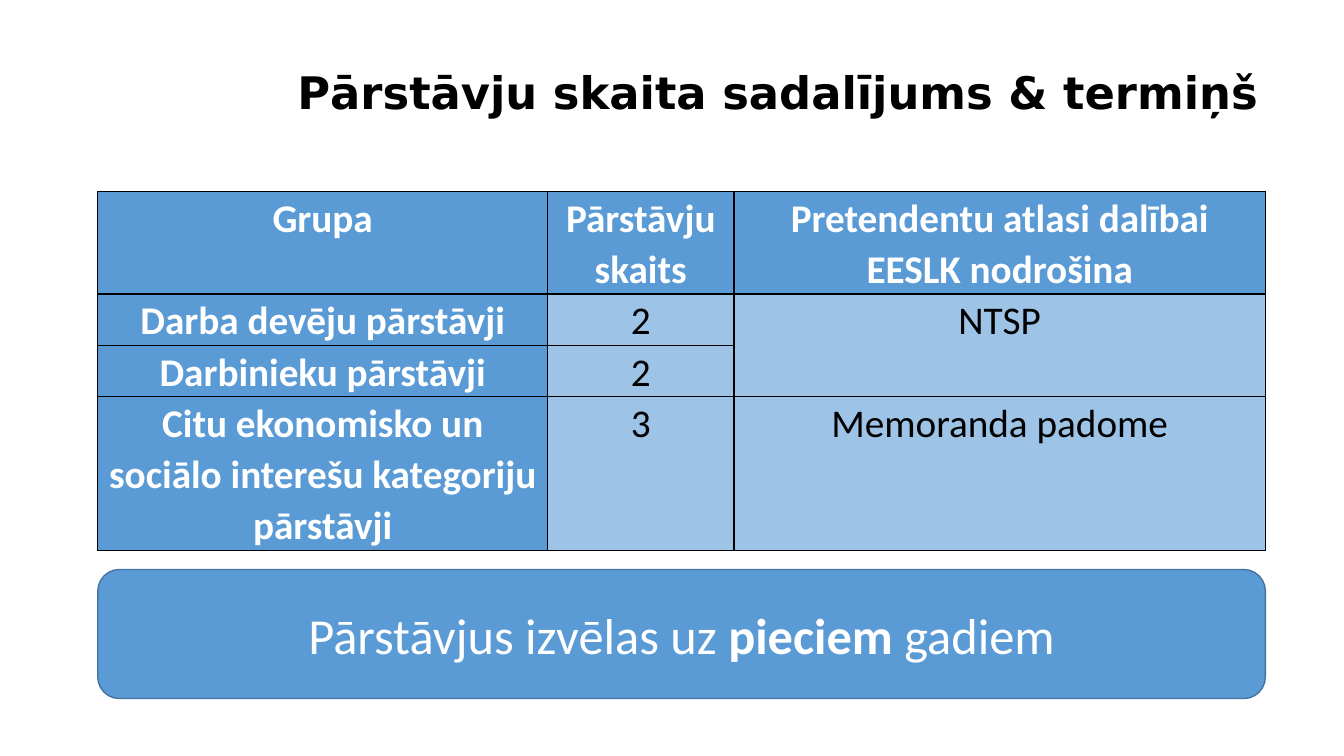
from lxml.etree import SubElement as Sub
from pptx import Presentation
from pptx.dml.color import RGBColor as RGB
from pptx.enum.shapes import MSO_SHAPE as Shape
from pptx.enum.text import MSO_ANCHOR as Anchor, PP_ALIGN as Align
from pptx.oxml.ns import qn
from pptx.util import Pt

PX = 9144  # 100 px to the inch
BLUE, PALE, EDGE = "5B9BD5", "9DC3E6", "43739E"
WHITE, BLACK = "FFFFFF", "000000"


def paint(fill, color):
    fill.solid()
    fill.fore_color.rgb = RGB.from_string(color)


def write(frame, *parts, size, color, font="Calibri", align=Align.CENTER,
          anchor=Anchor.TOP, space=None, after=None):
    """Fill the frame with one paragraph of (text, bold) parts."""
    frame.word_wrap = True
    frame.vertical_anchor = anchor
    para = frame.paragraphs[0]
    para.alignment = align
    para.line_spacing = space
    para.space_after = after
    for text, bold in parts:
        run = para.add_run()
        run.text = text
        run.font.name = font
        run.font.size = Pt(size)
        run.font.bold = bold
        run.font.color.rgb = RGB.from_string(color)


deck = Presentation()
deck.slide_width, deck.slide_height = 1333 * PX, 750 * PX
slide = deck.slides.add_slide(deck.slide_layouts[5])
paint(slide.background.fill, WHITE)

title = slide.shapes.title
title.left, title.top, title.width, title.height = [n * PX for n in (285, 65, 990, 113)]
write(title.text_frame, ("Pārstāvju skaita sadalījums & termiņš", True), size=32,
      color=BLACK, font="DejaVu Sans", align=Align.LEFT, space=0.9)

rows = [
    ("Grupa", "Pārstāvju skaits", "Pretendentu atlasi dalībai EESLK nodrošina"),
    ("Darba devēju pārstāvji", "2", "NTSP"),
    ("Darbinieku pārstāvji", "2", ""),
    ("Citu ekonomisko un sociālo interešu kategoriju pārstāvji", "3", "Memoranda padome"),
]
widths, heights = (446, 185, 527), (101, 51, 51, 152)
left, top, width = 97, 190, sum(widths)
table = slide.shapes.add_table(len(rows), len(widths), left * PX, top * PX,
                               width * PX, sum(heights) * PX).table
for col, size in zip(table.columns, widths):
    col.width = size * PX
for row, size in zip(table.rows, heights):
    row.height = size * PX
table.cell(1, 2).merge(table.cell(2, 2))

for r, row in enumerate(rows):
    for c, text in enumerate(row):
        cell = table.cell(r, c)
        head = r == 0 or c == 0
        cell.margin_left = cell.margin_right = 7 * PX
        cell.margin_top = cell.margin_bottom = 0
        props = cell._tc.get_or_add_tcPr()
        for side in ("a:lnL", "a:lnR", "a:lnT", "a:lnB"):
            line = Sub(props, qn(side), w=str(Pt(1)))
            Sub(Sub(line, qn("a:solidFill")), qn("a:srgbClr"), val=BLACK)
        paint(cell.fill, BLUE if head else PALE)
        if text:
            write(cell.text_frame, (text, head), size=28, space=1.07, after=Pt(8),
                  color=WHITE if head else BLACK)

note = slide.shapes.add_shape(Shape.ROUNDED_RECTANGLE, left * PX, 565 * PX,
                              width * PX, 128 * PX)
note.shadow.inherit = False
paint(note.fill, BLUE)
paint(note.line.fill, EDGE)
note.line.width = Pt(1)
write(note.text_frame, ("Pārstāvjus izvēlas uz ", False), ("pieciem", True),
      (" gadiem", False), size=36, color=WHITE, anchor=Anchor.MIDDLE)

deck.save("out.pptx")
